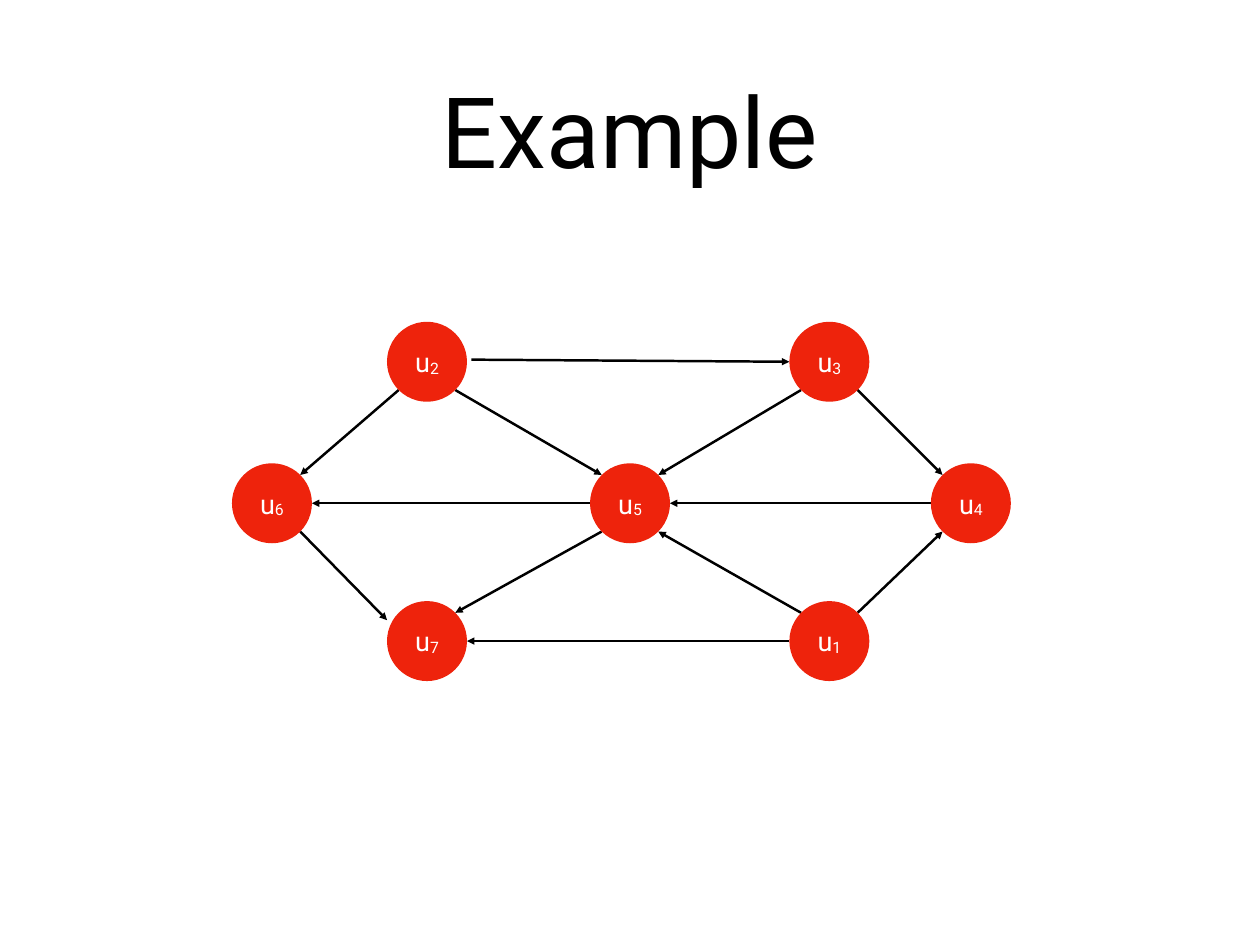
import math

import pptx
import pptx.dml.color
import pptx.enum.shapes
import pptx.enum.text
import pptx.oxml.ns
import pptx.util
from lxml import etree

Pt = pptx.util.Pt
FONT = "Roboto"
COLORS = {"text": "000000", "edge": "000000", "node": "EE230C", "label": "FFFFFF"}
RADIUS = 32.5
INSET = 4
TOP, MIDDLE, BOTTOM = 294, 409, 521

# Node number: centre of its circle
NODES = {
    1: (674, BOTTOM),
    2: (347, TOP),
    3: (674, TOP),
    4: (789, MIDDLE),
    5: (512, MIDDLE),
    6: (221, MIDDLE),
    7: (347, BOTTOM),
}
EDGES = [
    (2, 3), (3, 4), (4, 5), (5, 6), (2, 6), (2, 5),
    (5, 7), (6, 7), (1, 7), (1, 4), (3, 5), (1, 5),
]
# Ends that stand off the regular rim points
CUSTOM_STARTS = {(2, 3): (383, 292.3)}
CUSTOM_ENDS = {(6, 7): (314.6, 504)}


def rgb(name):
    return pptx.dml.color.RGBColor.from_string(COLORS[name])


def set_up_frame(shape):
    """Centre the text both ways and return the first paragraph."""
    frame = shape.text_frame
    frame.word_wrap = True
    frame.vertical_anchor = pptx.enum.text.MSO_ANCHOR.MIDDLE
    frame.margin_left = frame.margin_right = Pt(INSET)
    frame.margin_top = frame.margin_bottom = Pt(INSET)
    paragraph = frame.paragraphs[0]
    paragraph.alignment = pptx.enum.text.PP_ALIGN.CENTER
    return paragraph


def add_run(paragraph, text, size, color):
    run = paragraph.add_run()
    run.text = text
    run.font.name = FONT
    run.font.size = Pt(size)
    run.font.color.rgb = rgb(color)
    return run


def add_title(slide, text):
    shape = slide.shapes.add_textbox(Pt(75), Pt(20), Pt(874), Pt(170))
    add_run(set_up_frame(shape), text, 80, "text")


def rim_point(node, other):
    """Point on the rim of node facing other: level or at 45 degrees."""
    x, y = NODES[node]
    other_x, other_y = NODES[other]
    side = math.copysign(1, other_x - x)
    if y == other_y:
        return x + side * RADIUS, y
    reach = RADIUS * math.sqrt(0.5)
    return x + side * reach, y + math.copysign(reach, other_y - y)


def add_edge(slide, edge):
    source, target = edge
    start = CUSTOM_STARTS.get(edge, rim_point(source, target))
    end = CUSTOM_ENDS.get(edge, rim_point(target, source))
    connector = slide.shapes.add_connector(
        pptx.enum.shapes.MSO_CONNECTOR.STRAIGHT,
        *(Pt(value) for value in start + end),
    )
    connector.line.color.rgb = rgb("edge")
    connector.line.width = Pt(2)
    qn = pptx.oxml.ns.qn
    line = connector.line._get_or_add_ln()
    etree.SubElement(line, qn("a:tailEnd"), type="triangle")
    etree.SubElement(connector._element.spPr, qn("a:effectLst"))


def add_node(slide, number):
    x, y = NODES[number]
    shape = slide.shapes.add_shape(
        pptx.enum.shapes.MSO_SHAPE.OVAL,
        Pt(x - RADIUS), Pt(y - RADIUS), Pt(2 * RADIUS), Pt(2 * RADIUS),
    )
    shape.shadow.inherit = False
    shape.fill.solid()
    shape.fill.fore_color.rgb = rgb("node")
    shape.line.fill.background()
    paragraph = set_up_frame(shape)
    add_run(paragraph, "u", 22, "label")
    subscript = add_run(paragraph, str(number), 22, "label")
    subscript.font._element.set("baseline", "-6000")


def main():
    presentation = pptx.Presentation()
    presentation.slide_width = Pt(1024)
    presentation.slide_height = Pt(768)
    slide = presentation.slides.add_slide(presentation.slide_layouts[6])
    add_title(slide, "Example")
    for edge in EDGES:
        add_edge(slide, edge)
    for number in NODES:
        add_node(slide, number)
    presentation.save("out.pptx")


if __name__ == "__main__":
    main()
